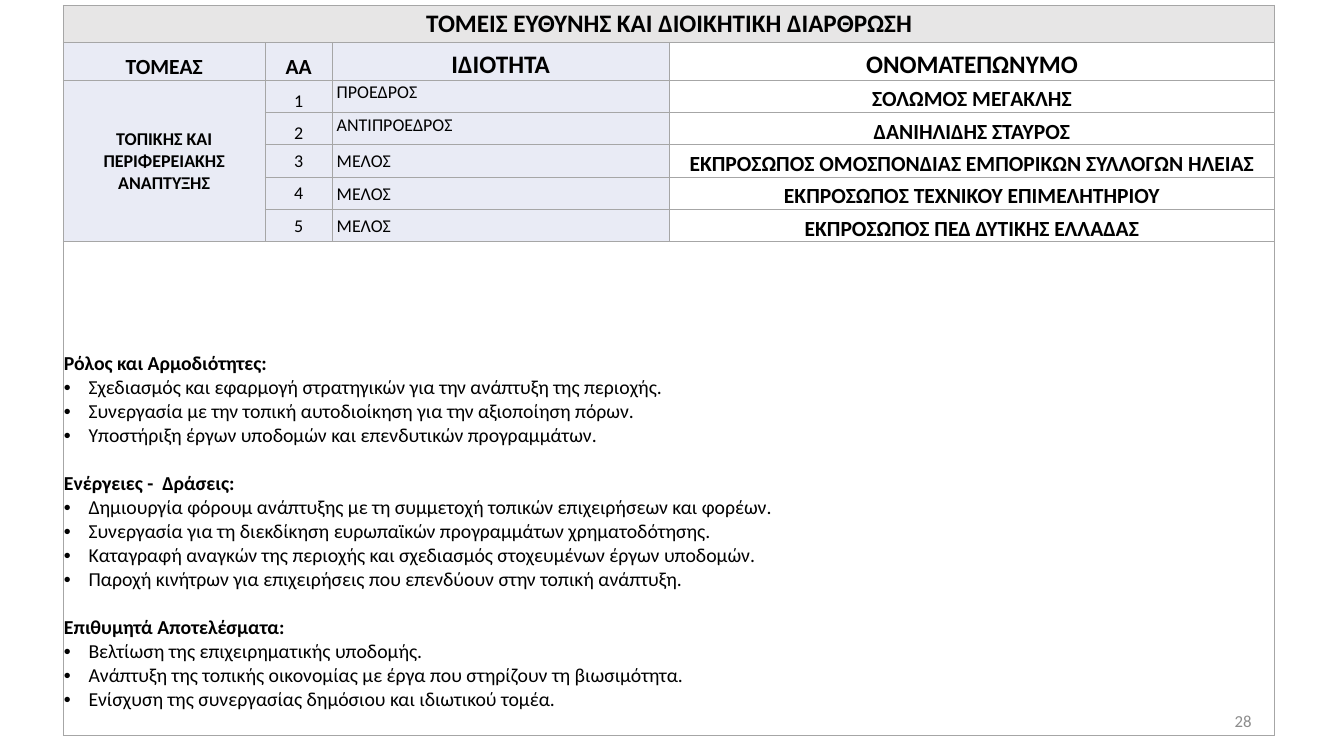
from dataclasses import dataclass

from lxml import etree
from pptx import Presentation, util as u
from pptx.dml import color
from pptx.enum import text
from pptx.oxml import ns

FONT = "Calibri"
BLACK, GREY, BORDER = "000000", "8C8C8C", "A6A6A6"
WHITE, HEADING_FILL, SIDE_FILL = "FFFFFF", "E7E6E6", "E9EBF5"
TOP = text.MSO_ANCHOR.TOP
MIDDLE = text.MSO_ANCHOR.MIDDLE
BOTTOM = text.MSO_ANCHOR.BOTTOM
LEFT, CENTER, RIGHT = text.PP_ALIGN.LEFT, text.PP_ALIGN.CENTER, text.PP_ALIGN.RIGHT
TIGHT = (0.01, 0.01, 0.01, 0)
ROLE_MARGINS = (0.07, 0, 0.07, 0)
DUTIES_MARGINS = (0.01, 0.01, 0.01, 0.36)
BULLET_INDENT = u.Inches(0.38)
SECTION_GAP = 26.8
COLUMN_WIDTHS = (3.12, 1.04, 5.21, 9.37)
ROW_HEIGHTS = (0.58, 0.58, 0.5, 0.5, 0.5, 0.5, 0.5, 7.63)


@dataclass
class Member:
    role: str
    name: str
    number_anchor: text.MSO_ANCHOR
    role_anchor: text.MSO_ANCHOR


@dataclass
class Section:
    heading: str
    points: list[str]


MEMBERS = [
    Member("ΠΡΟΕΔΡΟΣ", "ΣΟΛΩΜΟΣ ΜΕΓΑΚΛΗΣ", BOTTOM, TOP),
    Member("ΑΝΤΙΠΡΟΕΔΡΟΣ", "ΔΑΝΙΗΛΙΔΗΣ ΣΤΑΥΡΟΣ", BOTTOM, TOP),
    Member("ΜΕΛΟΣ", "ΕΚΠΡΟΣΩΠΟΣ ΟΜΟΣΠΟΝΔΙΑΣ ΕΜΠΟΡΙΚΩΝ ΣΥΛΛΟΓΩΝ ΗΛΕΙΑΣ", MIDDLE, MIDDLE),
    Member("ΜΕΛΟΣ", "ΕΚΠΡΟΣΩΠΟΣ ΤΕΧΝΙΚΟΥ ΕΠΙΜΕΛΗΤΗΡΙΟΥ", MIDDLE, MIDDLE),
    Member("ΜΕΛΟΣ", "ΕΚΠΡΟΣΩΠΟΣ ΠΕΔ ΔΥΤΙΚΗΣ ΕΛΛΑΔΑΣ", MIDDLE, MIDDLE),
]

SECTIONS = [
    Section("Ρόλος και Αρμοδιότητες:", [
        "Σχεδιασμός και εφαρμογή στρατηγικών για την ανάπτυξη της περιοχής.",
        "Συνεργασία με την τοπική αυτοδιοίκηση για την αξιοποίηση πόρων.",
        "Υποστήριξη έργων υποδομών και επενδυτικών προγραμμάτων.",
    ]),
    Section("Ενέργειες -  Δράσεις:", [
        "Δημιουργία φόρουμ ανάπτυξης με τη συμμετοχή τοπικών επιχειρήσεων και φορέων.",
        "Συνεργασία για τη διεκδίκηση ευρωπαϊκών προγραμμάτων χρηματοδότησης.",
        "Καταγραφή αναγκών της περιοχής και σχεδιασμός στοχευμένων έργων υποδομών.",
        "Παροχή κινήτρων για επιχειρήσεις που επενδύουν στην τοπική ανάπτυξη.",
    ]),
    Section("Επιθυμητά Αποτελέσματα:", [
        "Βελτίωση της επιχειρηματικής υποδομής.",
        "Ανάπτυξη της τοπικής οικονομίας με έργα που στηρίζουν τη βιωσιμότητα.",
        "Ενίσχυση της συνεργασίας δημόσιου και ιδιωτικού τομέα.",
    ]),
]


def rgb(value: str) -> color.RGBColor:
    return color.RGBColor.from_string(value)


def write(frame, words: str, *, size: float, bold: bool = False, hue: str = BLACK,
          align=LEFT, bullet: bool = False, before: float = 0, after: float = 0,
          spacing: float = 1.0) -> None:
    paragraph = frame.paragraphs[0] if not frame.text else frame.add_paragraph()
    paragraph.alignment = align
    paragraph.space_before, paragraph.space_after = u.Pt(before), u.Pt(after)
    paragraph.line_spacing = spacing
    if bullet:
        properties = paragraph._p.get_or_add_pPr()
        properties.set("marL", str(BULLET_INDENT))
        properties.set("indent", str(-BULLET_INDENT))
        etree.SubElement(properties, ns.qn("a:buFont"), typeface="Arial")
        etree.SubElement(properties, ns.qn("a:buChar"), char="•")
    run = paragraph.add_run()
    run.text = words
    run.font.name, run.font.size, run.font.bold = FONT, u.Pt(size), bold
    run.font.color.rgb = rgb(hue)


def set_borders(cell) -> None:
    properties = cell._tc.get_or_add_tcPr()
    for side in ("lnL", "lnR", "lnT", "lnB"):
        line = etree.SubElement(properties, ns.qn(f"a:{side}"), w=str(u.Pt(1)))
        fill = etree.SubElement(line, ns.qn("a:solidFill"))
        etree.SubElement(fill, ns.qn("a:srgbClr"), val=BORDER)


def style_cell(cell, fill: str, anchor, margins: tuple = TIGHT):
    cell.fill.solid()
    cell.fill.fore_color.rgb = rgb(fill)
    cell.vertical_anchor = anchor
    cell.margin_left, cell.margin_top, cell.margin_right, cell.margin_bottom = map(
        u.Inches, margins)
    return cell.text_frame


def add_committee_table(slide):
    table = slide.shapes.add_table(
        len(ROW_HEIGHTS), len(COLUMN_WIDTHS), u.Inches(0.98), u.Inches(0.08),
        u.Inches(sum(COLUMN_WIDTHS)), u.Inches(sum(ROW_HEIGHTS))).table
    table.first_row = table.horz_banding = False
    for column, width in zip(table.columns, COLUMN_WIDTHS):
        column.width = u.Inches(width)
    for row, height in zip(table.rows, ROW_HEIGHTS):
        row.height = u.Inches(height)
    for cell in table.iter_cells():
        set_borders(cell)
    last = len(ROW_HEIGHTS) - 1
    table.cell(0, 0).merge(table.cell(0, 3))
    table.cell(2, 0).merge(table.cell(last - 1, 0))
    table.cell(last, 0).merge(table.cell(last, 3))
    return table


def fill_headings(table) -> None:
    write(style_cell(table.cell(0, 0), HEADING_FILL, MIDDLE),
          "ΤΟΜΕΙΣ ΕΥΘΥΝΗΣ ΚΑΙ ΔΙΟΙΚΗΤΙΚΉ ΔΙΑΡΘΡΩΣΗ", size=28, bold=True, align=CENTER)
    headings = (("ΤΟΜΕΑΣ", 24, SIDE_FILL), ("ΑΑ", 24, SIDE_FILL),
                ("ΙΔΙΟΤΗΤΑ", 28, SIDE_FILL), ("ΟΝΟΜΑΤΕΠΩΝΥΜΟ", 28, WHITE))
    for column, (heading, size, fill) in enumerate(headings):
        write(style_cell(table.cell(1, column), fill, BOTTOM), heading,
              size=size, bold=True, align=CENTER)
    write(style_cell(table.cell(2, 0), SIDE_FILL, MIDDLE),
          "ΤΟΠΙΚΗΣ ΚΑΙ ΠΕΡΙΦΕΡΕΙΑΚΗΣ ΑΝΑΠΤΥΞΗΣ", size=20, bold=True, align=CENTER)


def fill_members(table) -> None:
    for number, member in enumerate(MEMBERS, start=1):
        row = number + 1
        write(style_cell(table.cell(row, 1), SIDE_FILL, member.number_anchor),
              str(number), size=20, align=CENTER)
        write(style_cell(table.cell(row, 2), SIDE_FILL, member.role_anchor, ROLE_MARGINS),
              member.role, size=20, after=8, spacing=1.07)
        write(style_cell(table.cell(row, 3), WHITE, BOTTOM),
              member.name, size=24, bold=True, align=CENTER)


def fill_duties(table) -> None:
    duties = style_cell(table.cell(len(ROW_HEIGHTS) - 1, 0), WHITE, BOTTOM, DUTIES_MARGINS)
    for index, section in enumerate(SECTIONS):
        write(duties, section.heading, size=22, bold=True,
              before=SECTION_GAP if index else 0)
        for point in section.points:
            write(duties, point, size=22, bullet=True)


def add_page_number(slide) -> None:
    page_number = slide.shapes.add_textbox(
        u.Inches(14.68), u.Inches(10.84), u.Inches(4.68), u.Inches(0.62)).text_frame
    page_number.word_wrap = True
    page_number.vertical_anchor = MIDDLE
    page_number.margin_left = page_number.margin_right = 0
    page_number.margin_top = page_number.margin_bottom = 0
    write(page_number, "28", size=18.7, hue=GREY, align=RIGHT)


def main() -> None:
    deck = Presentation()
    deck.slide_width, deck.slide_height = u.Inches(20.79), u.Inches(11.69)
    slide = deck.slides.add_slide(deck.slide_layouts[6])
    table = add_committee_table(slide)
    fill_headings(table)
    fill_members(table)
    fill_duties(table)
    add_page_number(slide)
    deck.save("out.pptx")


if __name__ == "__main__":
    main()
